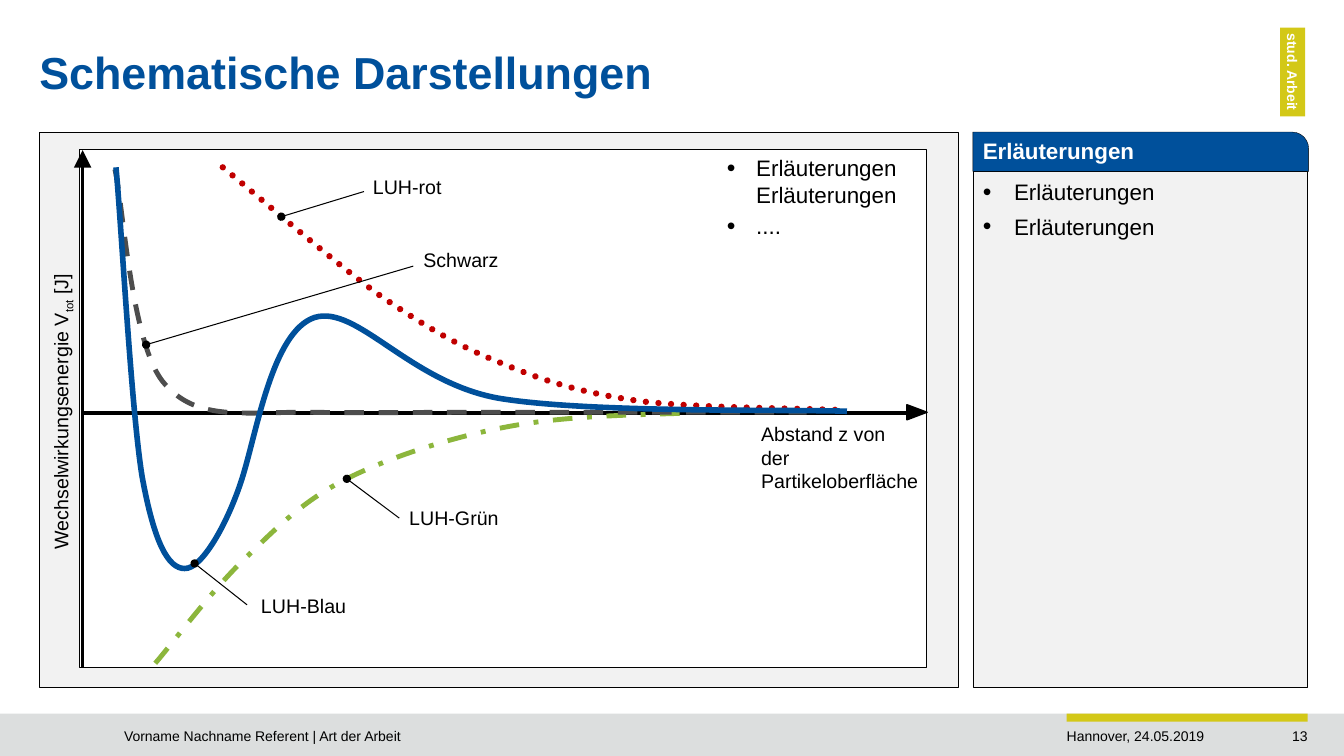
import dataclasses
import typing

import lxml.etree
import pptx
import pptx.dml.color
import pptx.enum.dml
import pptx.enum.shapes
import pptx.enum.text
import pptx.oxml.ns
import pptx.util

Inches = pptx.util.Inches
Kind = pptx.enum.shapes.MSO_SHAPE
Dash = pptx.enum.dml.MSO_LINE
Align = pptx.enum.text.PP_ALIGN
Anchor = pptx.enum.text.MSO_ANCHOR
Point = tuple[float, float]
Bounds = tuple[float, float, float, float]


@dataclasses.dataclass(frozen=True)
class Theme:
    font: str = "Arial"
    blue: str = "00509B"
    lime: str = "D3C817"
    red: str = "C00000"
    green: str = "8CB63C"
    dark: str = "4D4D4D"
    black: str = "000000"
    white: str = "FFFFFF"
    pale: str = "F2F2F2"
    foot: str = "DCDEDE"
    small: int = 10
    label: int = 14
    body: int = 16
    title: int = 32


@dataclasses.dataclass(frozen=True)
class Curve:
    color: str
    width: float
    start: Point
    bends: list[tuple[float, float, float, float, float, float]]
    dash: typing.Optional[Dash] = None
    cap: str = "flat"


@dataclasses.dataclass(frozen=True)
class Label:
    text: str
    box: Bounds
    start: Point
    target: Point
    joined: bool = False


THEME = Theme()

CURVES = [
    Curve(THEME.red, 4.5, (2.21, 1.66), [
        (2.47, 1.87, 3.32, 2.61, 3.78, 2.94), (4.25, 3.26, 4.56, 3.44, 4.99, 3.61),
        (5.42, 3.79, 5.79, 3.9, 6.35, 3.98), (6.92, 4.05, 7.95, 4.05, 8.38, 4.07),
    ], Dash.ROUND_DOT, "rnd"),
    Curve(THEME.green, 3.5, (1.54, 6.58), [
        (1.68, 6.42, 2.07, 5.9, 2.37, 5.6), (2.68, 5.3, 2.95, 5.01, 3.38, 4.78),
        (3.82, 4.55, 4.43, 4.35, 5, 4.24), (5.56, 4.13, 6.16, 4.12, 6.77, 4.1),
    ], Dash.DASH_DOT),
    Curve(THEME.dark, 3.5, (1.14, 1.68), [
        (1.22, 2.02, 1.3, 3.38, 1.61, 3.78), (1.93, 4.18, 2.38, 4.09, 3.04, 4.09),
        (3.68, 4.1, 4.12, 4.09, 4.94, 4.09), (5.53, 4.09, 6.04, 4.09, 6.55, 4.09),
        (7.06, 4.09, 7.7, 4.09, 8, 4.09),
    ], Dash.DASH),
    Curve(THEME.blue, 4, (1.15, 1.66), [
        (1.2, 2.17, 1.3, 4.06, 1.41, 4.73), (1.53, 5.39, 1.67, 5.64, 1.83, 5.64),
        (2, 5.65, 2.26, 5.19, 2.4, 4.75), (2.55, 4.28, 2.7, 3.29, 3.12, 3.15),
        (3.54, 3.02, 4.06, 3.79, 4.94, 3.95), (5.82, 4.1, 7.83, 4.06, 8.4, 4.08),
    ]),
]

LABELS = [
    Label("LUH-rot", (3.6, 1.69, 0.89, 0.34), (3.61, 1.9), (2.79, 2.15)),
    Label("Schwarz", (4.1, 2.41, 0.95, 0.34), (4.1, 2.64), (1.45, 3.42)),
    Label("LUH-Grün", (3.96, 4.97, 1.09, 0.34), (3.96, 5.15), (3.44, 4.75), True),
    Label("LUH-Blau", (2.49, 5.84, 2.48, 0.33), (2.45, 6), (1.93, 5.59)),
]


def tint(color: str) -> pptx.dml.color.RGBColor:
    return pptx.dml.color.RGBColor.from_string(color)


def bullet(para, indent: float) -> None:
    props = para._p.get_or_add_pPr()
    props.set("marL", str(Inches(indent)))
    props.set("indent", str(-Inches(indent)))
    for tag, name, value in (("a:buSzPct", "val", "110000"),
                             ("a:buFont", "typeface", THEME.font),
                             ("a:buChar", "char", "•")):
        lxml.etree.SubElement(props, pptx.oxml.ns.qn(tag)).set(name, value)


def write(shape, *paras, size: int = THEME.label, color: str = THEME.black,
          bold: bool = False, align=Align.LEFT, anchor=Anchor.TOP, wrap: bool = True,
          inset: Bounds = (0.1, 0.05, 0.1, 0.05), indent: float = 0,
          spacing: float = 1, before: float = 0, after: float = 0):
    frame = shape.text_frame
    frame.auto_size = pptx.enum.text.MSO_AUTO_SIZE.NONE
    frame.word_wrap = wrap
    frame.vertical_anchor = anchor
    (frame.margin_left, frame.margin_top,
     frame.margin_right, frame.margin_bottom) = map(Inches, inset)
    for index, parts in enumerate(paras):
        para = frame.add_paragraph() if index else frame.paragraphs[0]
        para.alignment = align
        para.line_spacing = spacing
        para.space_before = pptx.util.Pt(before if index else 0)
        para.space_after = pptx.util.Pt(after)
        if indent:
            bullet(para, indent)
        for text, base in [(parts, 0)] if isinstance(parts, str) else parts:
            run = para.add_run()
            run.text = text
            run.font.name = THEME.font
            run.font.size = pptx.util.Pt(size)
            run.font.bold = bold
            run.font.color.rgb = tint(color)
            if base:
                run.font._element.set("baseline", str(base * 1000))
    return shape


def add_box(slide, box: Bounds, fill: str, line: float = 0, kind=Kind.RECTANGLE,
            turn: float = 0):
    shape = slide.shapes.add_shape(kind, *map(Inches, box))
    shape.shadow.inherit = False
    shape.rotation = turn
    shape.fill.solid()
    shape.fill.fore_color.rgb = tint(fill)
    if line:
        shape.line.color.rgb = tint(THEME.black)
        shape.line.width = pptx.util.Pt(line)
    else:
        shape.line.fill.background()
    return shape


def add_text(slide, box: Bounds, *paras, turn: float = 0, **format):
    shape = slide.shapes.add_textbox(*map(Inches, box))
    shape.rotation = turn
    return write(shape, *paras, **format)


def add_link(slide, start: Point, end: Point, width: float, tail: str = "",
             scale: str = "med"):
    link = slide.shapes.add_connector(
        pptx.enum.shapes.MSO_CONNECTOR.STRAIGHT, *map(Inches, start + end))
    link.line.color.rgb = tint(THEME.black)
    link.line.width = pptx.util.Pt(width)
    if tail:
        head = lxml.etree.SubElement(link.line._get_or_add_ln(), pptx.oxml.ns.qn("a:tailEnd"))
        for name, value in (("type", tail), ("w", scale), ("len", scale)):
            head.set(name, value)
    lxml.etree.SubElement(link._element.spPr, pptx.oxml.ns.qn("a:effectLst"))
    return link


def bend(shape) -> None:
    lines = list(shape._element.iter(pptx.oxml.ns.qn("a:lnTo")))
    for index in range(0, len(lines), 3):
        cubic = lxml.etree.Element(pptx.oxml.ns.qn("a:cubicBezTo"))
        lines[index].addprevious(cubic)
        for line in lines[index:index + 3]:
            cubic.append(line[0])
            line.getparent().remove(line)


def add_curve(slide, curve: Curve) -> None:
    points = [(Inches(x), Inches(y)) for part in curve.bends
              for x, y in zip(part[::2], part[1::2])]
    pen = slide.shapes.build_freeform(*map(Inches, curve.start))
    pen.add_line_segments(points, close=False)
    shape = pen.convert_to_shape()
    bend(shape)
    shape.shadow.inherit = False
    shape.fill.background()
    shape.line.color.rgb = tint(curve.color)
    shape.line.width = pptx.util.Pt(curve.width)
    if curve.dash:
        shape.line.dash_style = curve.dash
    shape.line._get_or_add_ln().set("cap", curve.cap)


def add_label(slide, label: Label) -> None:
    box = add_text(slide, label.box, label.text)
    link = add_link(slide, label.start, label.target, 0.75, "oval")
    if label.joined:
        link.begin_connect(box, 1)


def add_frame(slide) -> None:
    add_box(slide, (0, 7.08, 13.33, 0.42), THEME.foot)
    add_box(slide, (10.58, 7.08, 2.39, 0.08), THEME.lime)
    add_text(slide, (12.11, 7.17, 0.86, 0.33), "13", size=THEME.small,
             align=Align.RIGHT, inset=(0.1, 0.05, 0, 0.05))
    for left, width, text in ((1.23, 9.05, "Vorname Nachname Referent | Art der Arbeit"),
                              (10.58, 1.91, "Hannover, 24.05.2019")):
        add_text(slide, (left, 7.17, width, 0.27), text, size=THEME.small,
                 inset=(0, 0.05, 0, 0.05))
    write(add_box(slide, (12.38, 0.59, 0.88, 0.25), THEME.lime, turn=90), "stud. Arbeit",
          size=THEME.small, color=THEME.white, bold=True, align=Align.CENTER,
          inset=(0, 0.04, 0, 0.04))
    title = slide.shapes.title
    title.left, title.top, title.width, title.height = map(Inches, (0.39, 0.35, 11.39, 0.79))
    write(title, "Schematische Darstellungen", size=THEME.title, color=THEME.blue,
          bold=True, anchor=Anchor.MIDDLE, inset=(0, 0, 0, 0), spacing=0.9)


def add_graph(slide) -> None:
    add_box(slide, (0.39, 1.31, 9.11, 5.51), THEME.pale, 0.25)
    add_box(slide, (0.79, 1.48, 8.4, 5.14), THEME.white, 0.75)
    add_link(slide, (0.81, 4.1), (9.05, 4.1), 2.5)
    add_text(slide, (7.45, 4.14, 1.76, 0.57), "Abstand z von der", "Partikeloberfläche")
    add_text(slide, (-0.87, 3.92, 2.94, 0.33),
             [("Wechselwirkungsenergie V", 0), ("tot", -25), (" [J]", 0)],
             turn=270, align=Align.CENTER, wrap=False)
    add_link(slide, (0.82, 6.62), (0.82, 1.49), 2.5, "triangle", "lg")
    for curve in CURVES:
        add_curve(slide, curve)
    for label in LABELS:
        add_label(slide, label)
    add_box(slide, (9.02, 3.99, 0.15, 0.2), THEME.black, 1, Kind.ISOSCELES_TRIANGLE, 90)
    add_text(slide, (7.21, 1.53, 1.98, 1.24), "Erläuterungen Erläuterungen", "....",
             size=THEME.body, inset=(0, 0, 0, 0), indent=0.29, before=3.2)


def add_notes(slide) -> None:
    write(add_box(slide, (9.65, 1.7, 3.32, 5.12), THEME.pale, 0.25),
          "Erläuterungen", "Erläuterungen", size=THEME.body, indent=0.31,
          spacing=1.08, after=4)
    head = add_box(slide, (9.65, 1.31, 3.33, 0.39), THEME.blue, 0.25, Kind.SNIP_ROUND_RECTANGLE)
    head.adjustments[0], head.adjustments[1] = 0.42, 0
    head._element.spPr.get_or_add_xfrm().set("flipH", "1")
    write(head, "Erläuterungen", size=THEME.body, color=THEME.white, bold=True,
          inset=(0.1, 0, 0.1, 0))


def main() -> None:
    deck = pptx.Presentation()
    deck.slide_width, deck.slide_height = Inches(13.33), Inches(7.5)
    slide = deck.slides.add_slide(deck.slide_layouts[5])
    add_frame(slide)
    add_graph(slide)
    add_notes(slide)
    deck.save("out.pptx")


if __name__ == "__main__":
    main()
